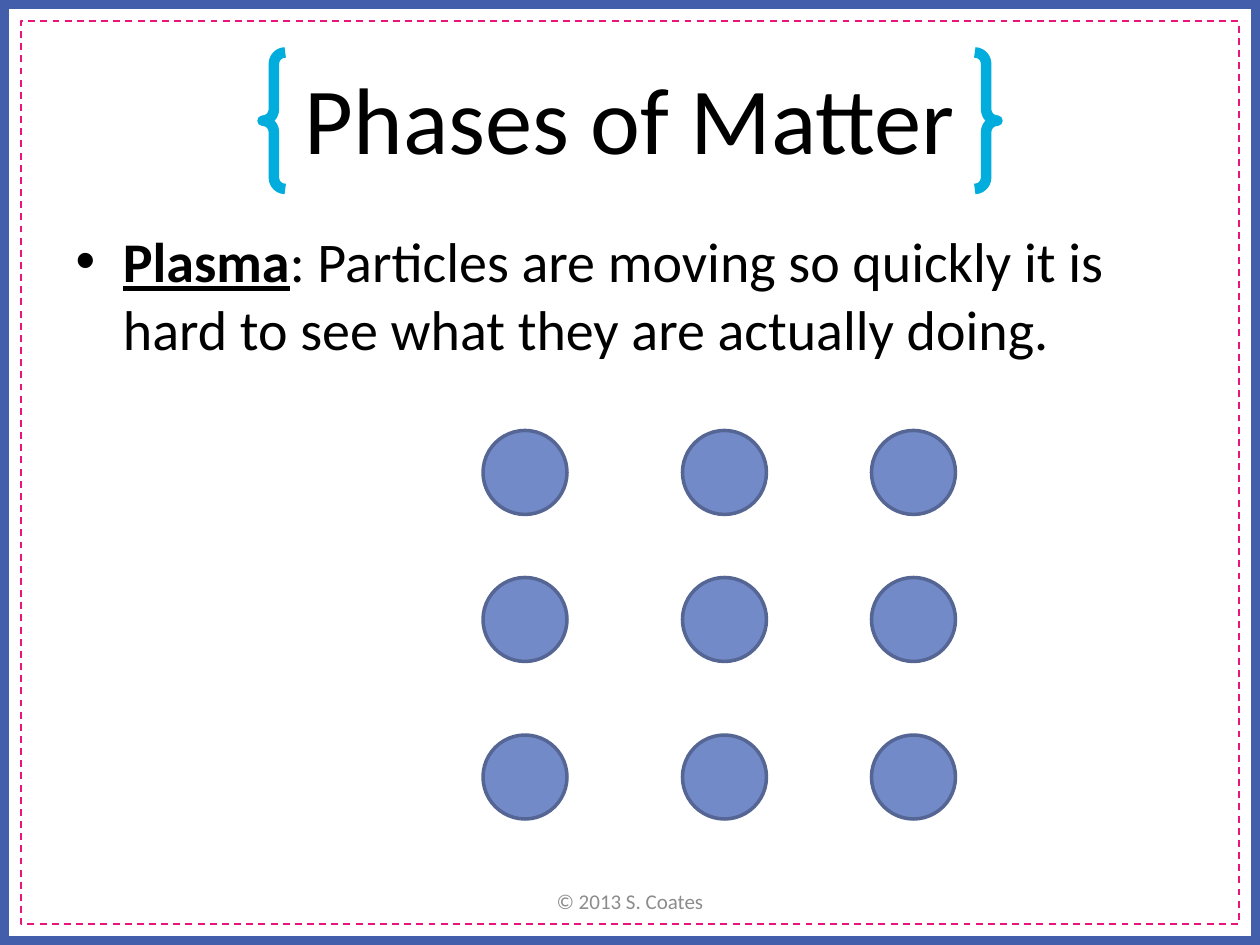
"""Build the slide about plasma as a phase of matter."""
from itertools import product

from pptx import Presentation
from pptx.dml.color import RGBColor
from pptx.enum import dml, shapes, text
from pptx.util import Pt

FONT = "Calibri"
BLACK = RGBColor(0x00, 0x00, 0x00)
GRAY = RGBColor(0x8C, 0x8C, 0x8C)
BORDER = RGBColor(0x43, 0x5E, 0xAA)
PINK = RGBColor(0xEA, 0x15, 0x7A)
CYAN = RGBColor(0x00, 0xAD, 0xDC)
PARTICLE = RGBColor(0x73, 0x8A, 0xC8)
PARTICLE_EDGE = RGBColor(0x55, 0x66, 0x94)
SHAPE = shapes.MSO_SHAPE


class Deck:
    def __init__(self):
        self.prs = Presentation()
        self.prs.slide_width, self.prs.slide_height = Pt(720), Pt(540)
        self.s = self.prs.slides.add_slide(self.prs.slide_layouts[1])

    def shape(self, kind, box, line, width, fill=None, dash=None):
        sp = self.s.shapes.add_shape(kind, *map(Pt, box))
        sp.shadow.inherit = False
        sp.line.color.rgb = line
        sp.line.width = Pt(width)
        if dash:
            sp.line.dash_style = dash
        if fill is None:
            sp.fill.background()
        else:
            sp.fill.solid()
            sp.fill.fore_color.rgb = fill

    def set_text(self, sp, runs, size, color=BLACK, align=None, anchor=None):
        tf = sp.text_frame
        tf.word_wrap = True
        tf.vertical_anchor = anchor
        p = tf.paragraphs[0]
        p.alignment = align
        p.space_before = Pt(0)
        p.font.name, p.font.size = FONT, Pt(size)
        p.font.color.rgb = color
        for words, strong in runs:
            r = p.add_run()
            r.text = words
            if strong:
                r.font.bold = r.font.underline = True

    def placeholder(self, index, box, runs, size, **style):
        sp = self.s.placeholders[index]
        sp.left, sp.top, sp.width, sp.height = map(Pt, box)
        self.s.shapes._spTree.append(sp._element)
        self.set_text(sp, runs, size, **style)

    def label(self, box, words, size, **style):
        sp = self.s.shapes.add_textbox(*map(Pt, box))
        self.set_text(sp, [(words, False)], size, **style)


def main():
    deck = Deck()
    centered = dict(align=text.PP_ALIGN.CENTER, anchor=text.MSO_ANCHOR.MIDDLE)
    deck.shape(SHAPE.RECTANGLE, (0, 0, 720, 540), BORDER, 10)
    deck.shape(SHAPE.RECTANGLE, (12, 12, 696, 516), PINK, 1,
               dash=dml.MSO_LINE.DASH)
    deck.shape(SHAPE.DOUBLE_BRACE, (150, 30, 420, 78), CYAN, 6)
    deck.placeholder(0, (36, 21.6, 648, 90), [("Phases of Matter", False)],
                     54, **centered)
    deck.placeholder(1, (36, 126, 648, 138), [
        ("Plasma", True),
        (": Particles are moving so quickly it is hard to see what they are "
         "actually doing.", False)], 32)
    deck.label((246, 500.5, 228, 28.8), "© 2013 S. Coates", 12, color=GRAY,
               **centered)
    for top, left in product((246, 330, 420), (276, 390, 498)):
        deck.shape(SHAPE.OVAL, (left, top, 48, 48), PARTICLE_EDGE, 2, PARTICLE)
    deck.prs.save("out.pptx")


if __name__ == "__main__":
    main()
